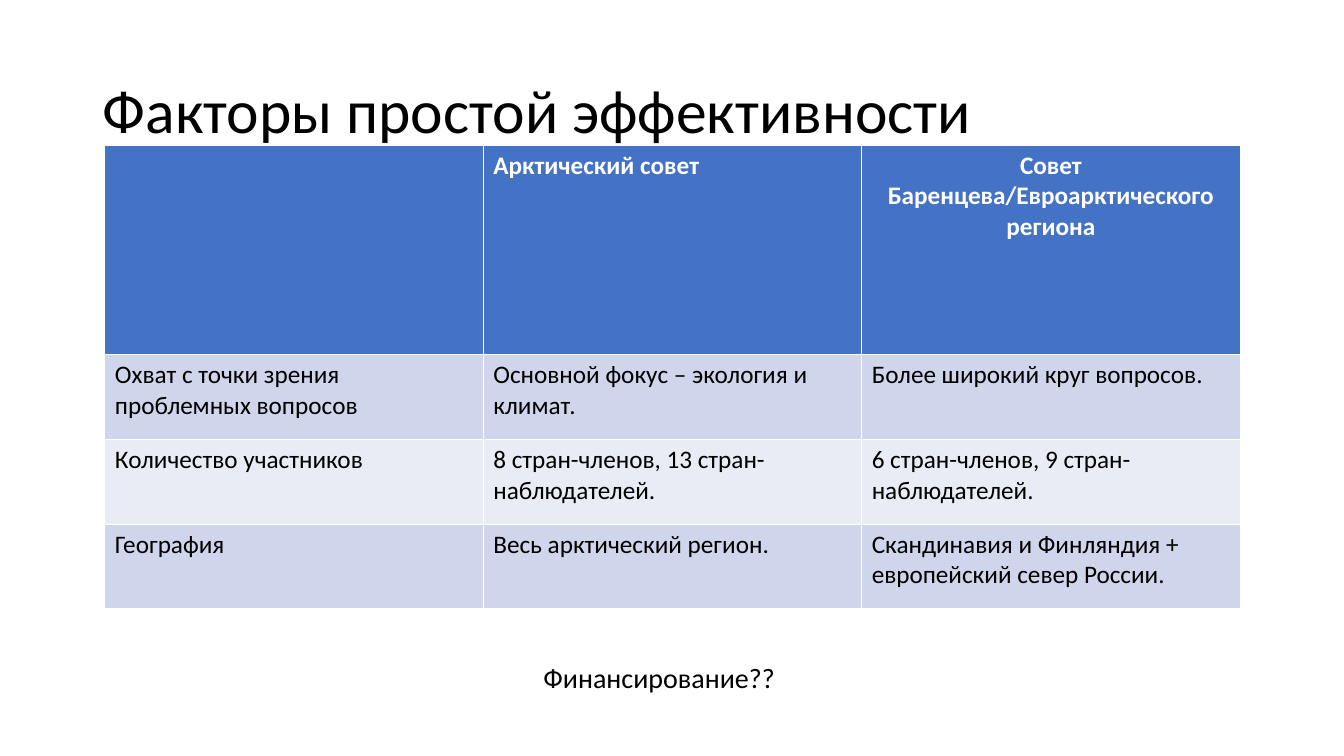
from pptx import Presentation
from pptx.dml.color import RGBColor
from pptx.enum.text import MSO_ANCHOR, MSO_AUTO_SIZE, PP_ALIGN
from pptx.util import Inches, Pt

HEADER_FILL = "4472C4"
BAND_FILLS = ["CFD5EA", "E9EBF5"]
ROWS = [
    ["", "Арктический совет", "Совет Баренцева/Евроарктического региона"],
    ["Охват с точки зрения проблемных вопросов",
     "Основной фокус – экология и климат.",
     "Более широкий круг вопросов."],
    ["Количество участников",
     "8 стран-членов, 13 стран-наблюдателей.",
     "6 стран-членов, 9 стран-наблюдателей."],
    ["География",
     "Весь арктический регион.",
     "Скандинавия и Финляндия + европейский север России."],
]


def color(value):
    return RGBColor.from_string(value)


def write(text_frame, text, font_color="000000", **font_format):
    """Fill the first paragraph with one formatted run and return the paragraph."""
    paragraph = text_frame.paragraphs[0]
    run = paragraph.add_run()
    run.text = text
    run.font.name = "Calibri"
    run.font.color.rgb = color(font_color)
    for name, value in font_format.items():
        setattr(run.font, name, value)
    return paragraph


presentation = Presentation()
presentation.slide_width = Inches(13.33)
presentation.slide_height = Inches(7.5)
slide = presentation.slides.add_slide(presentation.slide_layouts[6])

# Title
title = slide.shapes.add_textbox(Inches(0.92), Inches(0.4), Inches(11.5), Inches(1.45))
title.text_frame.word_wrap = True
title.text_frame.vertical_anchor = MSO_ANCHOR.MIDDLE
paragraph = write(title.text_frame, "Факторы простой эффективности", size=Pt(44))
paragraph.line_spacing = 0.9

# Comparison table
table = slide.shapes.add_table(
    len(ROWS), len(ROWS[0]), Inches(1.04), Inches(1.44), Inches(11.26), Inches(4.61)
).table
for row_index, texts in enumerate(ROWS):
    is_header = row_index == 0
    table.rows[row_index].height = Inches(2.08 if is_header else 0.84)
    for column_index, text in enumerate(texts):
        cell = table.cell(row_index, column_index)
        cell.fill.solid()
        cell.fill.fore_color.rgb = color(
            HEADER_FILL if is_header else BAND_FILLS[(row_index - 1) % 2]
        )
        if text:
            write(cell.text_frame, text, "FFFFFF" if is_header else "000000",
                  size=Pt(18), bold=is_header)
table.cell(0, 2).text_frame.paragraphs[0].alignment = PP_ALIGN.CENTER

# Closing question
question = slide.shapes.add_textbox(Inches(5.29), Inches(6.5), Inches(2.52), Inches(0.44))
question.text_frame.word_wrap = False
question.text_frame.auto_size = MSO_AUTO_SIZE.SHAPE_TO_FIT_TEXT
write(question.text_frame, "Финансирование??", size=Pt(20))

presentation.save("out.pptx")
